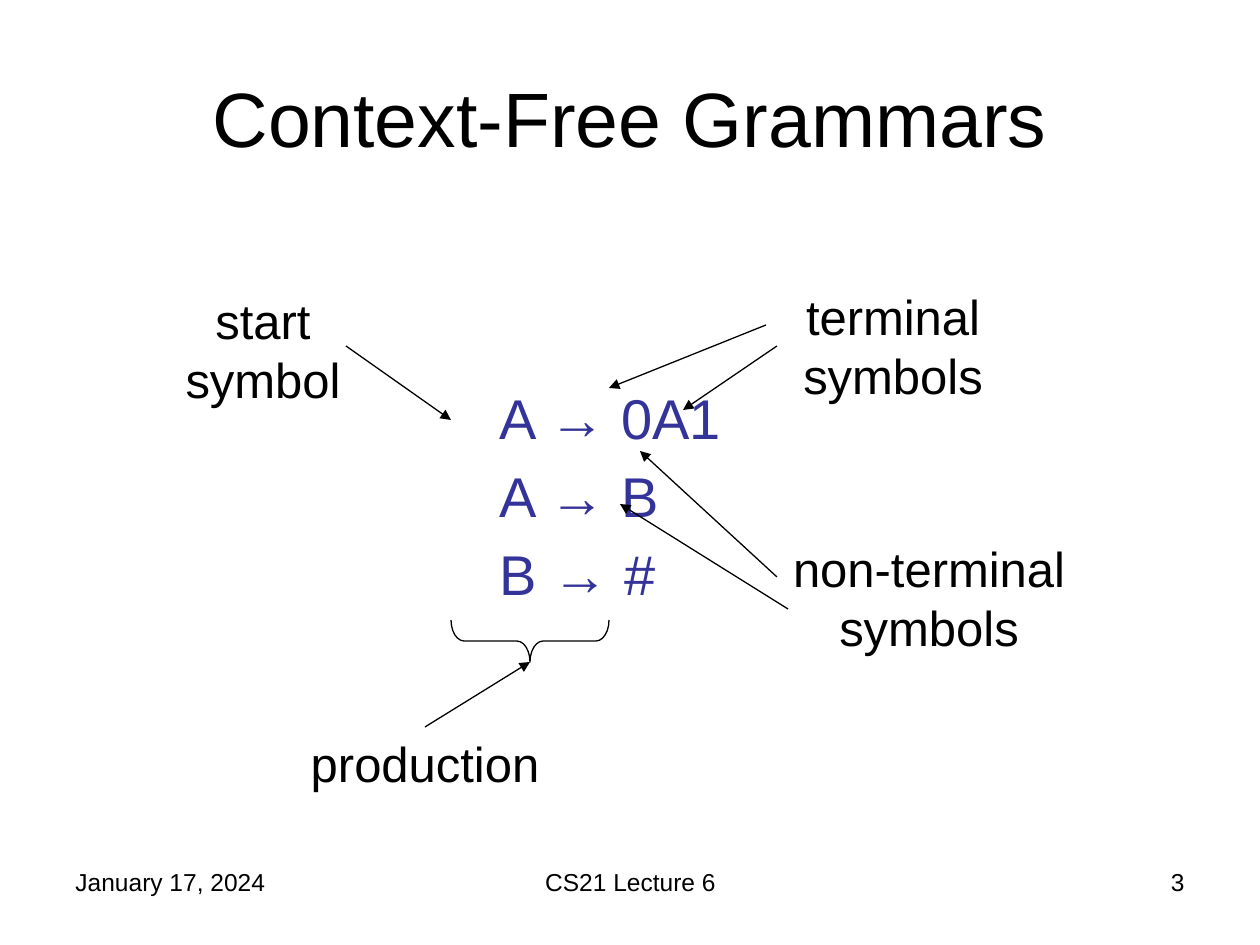
from lxml import etree
from pptx import Presentation
from pptx.dml.color import RGBColor
from pptx.enum.shapes import MSO_CONNECTOR, MSO_SHAPE
from pptx.enum.text import MSO_ANCHOR, MSO_AUTO_SIZE, PP_ALIGN
from pptx.oxml.ns import qn
from pptx.util import Emu, Pt

LEFT, CENTER, RIGHT = PP_ALIGN.LEFT, PP_ALIGN.CENTER, PP_ALIGN.RIGHT
TOP, MIDDLE = MSO_ANCHOR.TOP, MSO_ANCHOR.MIDDLE
NO_AUTOFIT = MSO_AUTO_SIZE.NONE
STRAIGHT = MSO_CONNECTOR.STRAIGHT
LEFT_BRACE = MSO_SHAPE.LEFT_BRACE
PX_PER_INCH = 126


def px(n):
    return Emu(round(n * 914400 / PX_PER_INCH))


def rgb(color):
    return RGBColor.from_string(color)


def write(tf, text, size=28, color="000000", font="Arial", align=CENTER,
          anchor=TOP, gap=0):
    tf.word_wrap = True
    tf.auto_size = NO_AUTOFIT
    tf.vertical_anchor = anchor
    for i, line in enumerate(text.split("\n")):
        p = tf.add_paragraph() if i else tf.paragraphs[0]
        p.alignment = align
        p.space_before = Pt(gap if i else 0)
        r = p.add_run()
        r.text = line
        r.font.size = Pt(size)
        r.font.name = font
        r.font.color.rgb = rgb(color)


class Deck:
    ink = "000000"
    accent = "333399"
    line_width = 0.75

    def __init__(self, width, height):
        self.prs = Presentation()
        self.prs.slide_width = px(width)
        self.prs.slide_height = px(height)
        self.s = self.prs.slides.add_slide(self.prs.slide_layouts[1])

    def place(self, sp, x, y, w, h):
        sp.left, sp.top, sp.width, sp.height = map(px, (x, y, w, h))

    def title(self, text, *box):
        sp = self.s.shapes.title
        self.place(sp, *box)
        write(sp.text_frame, text, size=44, color=self.ink, anchor=MIDDLE)

    def rules(self, text, *box, inset_left, inset_top):
        sp = self.s.placeholders[1]
        self.place(sp, *box)
        tf = sp.text_frame
        tf.margin_left, tf.margin_top = px(inset_left), px(inset_top)
        write(tf, text, size=32, color=self.accent, align=LEFT, gap=6.4)
        for p in tf.paragraphs:
            pPr = p._p.get_or_add_pPr()
            pPr.set("marL", "0")
            pPr.set("indent", "0")
            etree.SubElement(pPr, qn("a:buNone"))

    def label(self, text, *box, **fmt):
        sp = self.s.shapes.add_textbox(*map(px, box))
        write(sp.text_frame, text, color=self.ink, **fmt)

    def stroke(self, sp):
        sp.line.color.rgb = rgb(self.ink)
        sp.line.width = Pt(self.line_width)

    def arrow(self, *ends):
        sp = self.s.shapes.add_connector(STRAIGHT, *map(px, ends))
        self.stroke(sp)
        etree.SubElement(sp.line._get_or_add_ln(), qn("a:tailEnd"), type="triangle")
        etree.SubElement(sp._element.spPr, qn("a:effectLst"))

    def brace(self, *box):
        sp = self.s.shapes.add_shape(LEFT_BRACE, *map(px, box))
        sp.rotation = 270
        sp.adjustments[0] = 0.312
        sp.fill.background()
        sp.shadow.inherit = False
        self.stroke(sp)


def main():
    deck = Deck(1260, 945)
    for text, x, w, align in (
        ("January 17, 2024", 63, 294, LEFT),
        ("CS21 Lecture 6", 431, 399, CENTER),
        ("3", 903, 294, RIGHT),
    ):
        deck.label(text, x, 861, w, 66, size=14, align=align)

    deck.title("Context-Free Grammars", 63, 38, 1134, 158)
    deck.rules("A → 0A1\nA → B\nB → #", 63, 220, 1134, 624,
               inset_left=437, inset_top=163)

    for text, *box in (
        ("start symbol", 158, 284, 210, 130),
        ("terminal symbols", 788, 280, 210, 130),
        ("non-terminal symbols", 766, 532, 326, 130),
        ("production", 262, 727, 326, 72),
    ):
        deck.label(text, *box)

    for ends in (
        (346, 346, 451, 420),
        (766, 325, 609, 388),
        (777, 346, 683, 410),
        (788, 609, 620, 504),
        (777, 577, 640, 451),
        (425, 727, 530, 662),
    ):
        deck.arrow(*ends)
    deck.brace(509, 562, 42, 158)
    deck.prs.save("out.pptx")


if __name__ == "__main__":
    main()
